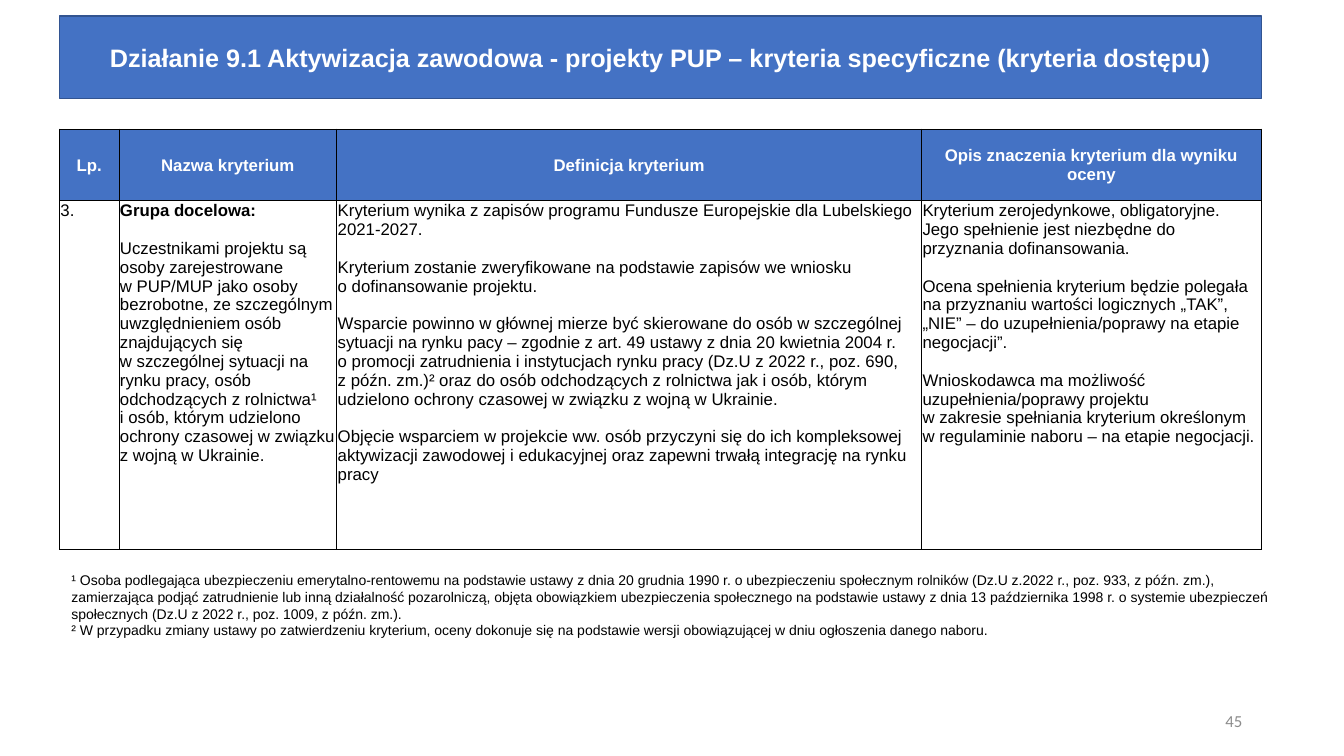
from lxml import etree
from pptx import Presentation
from pptx.dml.color import RGBColor
from pptx.enum.shapes import MSO_SHAPE
from pptx.enum.text import MSO_ANCHOR, PP_ALIGN
from pptx.oxml.ns import qn
from pptx.util import Inches, Pt

RECTANGLE = MSO_SHAPE.RECTANGLE
TOP, MIDDLE = MSO_ANCHOR.TOP, MSO_ANCHOR.MIDDLE
LEFT, CENTER, RIGHT = PP_ALIGN.LEFT, PP_ALIGN.CENTER, PP_ALIGN.RIGHT

SLIDE_WIDTH, SLIDE_HEIGHT = 13.33, 7.5
MARGIN, CONTENT_WIDTH = 0.59, 11.92
BLUE, DARK_BLUE, WHITE, BLACK, GREY = "4472C4", "325491", "FFFFFF", "000000", "8C8C8C"
BODY_SIZE = 12
BLANK_LINE = 13.5

TITLE = ("Działanie 9.1 Aktywizacja zawodowa - projekty PUP – "
         "kryteria specyficzne (kryteria dostępu)")
COLUMN_WEIGHTS = [59, 216, 580, 337]
ROW_HEIGHTS = [0.71, 3.46]
HEADERS = ["Lp.", "Nazwa kryterium", "Definicja kryterium",
           "Opis znaczenia kryterium dla wyniku oceny"]
NAME_HEADING = "Grupa docelowa:"
CRITERION = [
    ["3."],
    [
        NAME_HEADING,
        "Uczestnikami projektu są osoby zarejestrowane\n"
        "w PUP/MUP jako osoby bezrobotne, ze szczególnym uwzględnieniem osób "
        "znajdujących się\n"
        "w szczególnej sytuacji na rynku pracy, osób odchodzących z rolnictwa¹\n"
        "i osób, którym udzielono ochrony czasowej w związku z wojną w Ukrainie.",
    ],
    [
        "Kryterium wynika z zapisów programu Fundusze Europejskie dla Lubelskiego "
        "2021-2027.",
        "Kryterium zostanie zweryfikowane na podstawie zapisów we wniosku\n"
        "o dofinansowanie projektu.",
        "Wsparcie powinno w głównej mierze być skierowane do osób w szczególnej "
        "sytuacji na rynku pacy – zgodnie z art. 49 ustawy z dnia 20 kwietnia 2004 r.\n"
        "o promocji zatrudnienia i instytucjach rynku pracy (Dz.U z 2022 r., poz. 690,\n"
        "z późn. zm.)² oraz do osób odchodzących z rolnictwa jak i osób, którym "
        "udzielono ochrony czasowej w związku z wojną w Ukrainie.",
        "Objęcie wsparciem w projekcie ww. osób przyczyni się do ich kompleksowej "
        "aktywizacji zawodowej i edukacyjnej oraz zapewni trwałą integrację na rynku "
        "pracy",
    ],
    [
        "Kryterium zerojedynkowe, obligatoryjne. Jego spełnienie jest niezbędne do "
        "przyznania dofinansowania.",
        "Ocena spełnienia kryterium będzie polegała na przyznaniu wartości logicznych "
        "„TAK”,\n„NIE” – do uzupełnienia/poprawy na etapie negocjacji”.",
        "Wnioskodawca ma możliwość uzupełnienia/poprawy projektu\n"
        "w zakresie spełniania kryterium określonym w regulaminie naboru – na etapie "
        "negocjacji.",
    ],
]
FOOTNOTES = [
    "¹ Osoba podlegająca ubezpieczeniu emerytalno-rentowemu na podstawie ustawy z dnia "
    "20 grudnia 1990 r. o ubezpieczeniu społecznym rolników (Dz.U z.2022 r., poz. 933, "
    "z późn. zm.), zamierzająca podjąć zatrudnienie lub inną działalność pozarolniczą, "
    "objęta obowiązkiem ubezpieczenia społecznego na podstawie ustawy z dnia "
    "13 października 1998 r. o systemie ubezpieczeń społecznych (Dz.U z 2022 r., "
    "poz. 1009, z późn. zm.).",
    "² W przypadku zmiany ustawy po zatwierdzeniu kryterium, oceny dokonuje się na "
    "podstawie wersji obowiązującej w dniu ogłoszenia danego naboru.",
]


def color(value):
    return RGBColor.from_string(value)


def write(frame, texts, size, ink, bold=(), align=LEFT, font="Arial", gap=0):
    """Write one paragraph per text; texts listed in bold are set in bold."""
    frame.word_wrap = True
    for index, text in enumerate(texts):
        paragraph = frame.add_paragraph() if index else frame.paragraphs[0]
        paragraph.alignment = align
        paragraph.space_before = Pt(gap if index else 0)
        for line_index, line in enumerate(text.split("\n")):
            if line_index:
                paragraph.add_line_break()
            run = paragraph.add_run()
            run.text = line
            run.font.name = font
            run.font.size = Pt(size)
            run.font.bold = text in bold
            run.font.color.rgb = color(ink)


def add_title_band(slide, box):
    band = slide.shapes.add_shape(RECTANGLE, *map(Inches, box))
    band.shadow.inherit = False
    band.fill.solid()
    band.fill.fore_color.rgb = color(BLUE)
    band.line.color.rgb = color(DARK_BLUE)
    band.line.width = Pt(1)
    band.text_frame.vertical_anchor = MIDDLE
    write(band.text_frame, [TITLE], 18, WHITE, [TITLE], CENTER)


def add_borders(cell):
    properties = cell._tc.get_or_add_tcPr()
    for side in ("a:lnL", "a:lnR", "a:lnT", "a:lnB"):
        line = etree.SubElement(properties, qn(side), w=str(Pt(0.5)))
        fill = etree.SubElement(line, qn("a:solidFill"))
        etree.SubElement(fill, qn("a:srgbClr"), val=BLACK)


def format_cell(cell, anchor):
    cell.margin_left = cell.margin_right = cell.margin_top = Inches(0.01)
    cell.margin_bottom = 0
    cell.vertical_anchor = anchor
    add_borders(cell)


def add_criteria_table(slide, box):
    frame = slide.shapes.add_table(len(ROW_HEIGHTS), len(HEADERS), *map(Inches, box))
    table = frame.table
    table.first_row = table.horz_banding = False
    for row, height in zip(table.rows, ROW_HEIGHTS):
        row.height = Inches(height)
    for index, weight in enumerate(COLUMN_WEIGHTS):
        table.columns[index].width = Inches(box[2] * weight / sum(COLUMN_WEIGHTS))
        header, body = table.cell(0, index), table.cell(1, index)
        format_cell(header, MIDDLE)
        header.fill.solid()
        header.fill.fore_color.rgb = color(BLUE)
        write(header.text_frame, [HEADERS[index]], BODY_SIZE, WHITE, HEADERS, CENTER)
        format_cell(body, TOP)
        body.fill.background()
        write(body.text_frame, CRITERION[index], BODY_SIZE, BLACK, [NAME_HEADING],
              gap=BLANK_LINE)


def add_footnotes(slide, box):
    notes = slide.shapes.add_textbox(*map(Inches, box))
    write(notes.text_frame, FOOTNOTES, 10, BLACK)


def add_slide_number(slide, box):
    number = slide.shapes.add_textbox(*map(Inches, box))
    number.text_frame.vertical_anchor = MIDDLE
    write(number.text_frame, ["45"], 12, GREY, align=RIGHT, font="Calibri")


def main():
    presentation = Presentation()
    presentation.slide_width = Inches(SLIDE_WIDTH)
    presentation.slide_height = Inches(SLIDE_HEIGHT)
    slide = presentation.slides.add_slide(presentation.slide_layouts[6])
    add_title_band(slide, (MARGIN, 0.16, CONTENT_WIDTH, 0.82))
    add_criteria_table(slide, (MARGIN, 1.28, CONTENT_WIDTH, sum(ROW_HEIGHTS)))
    add_footnotes(slide, (0.61, 5.62, 12.11, 0.77))
    add_slide_number(slide, (9.42, 6.95, 3, 0.4))
    presentation.save("out.pptx")


if __name__ == "__main__":
    main()
